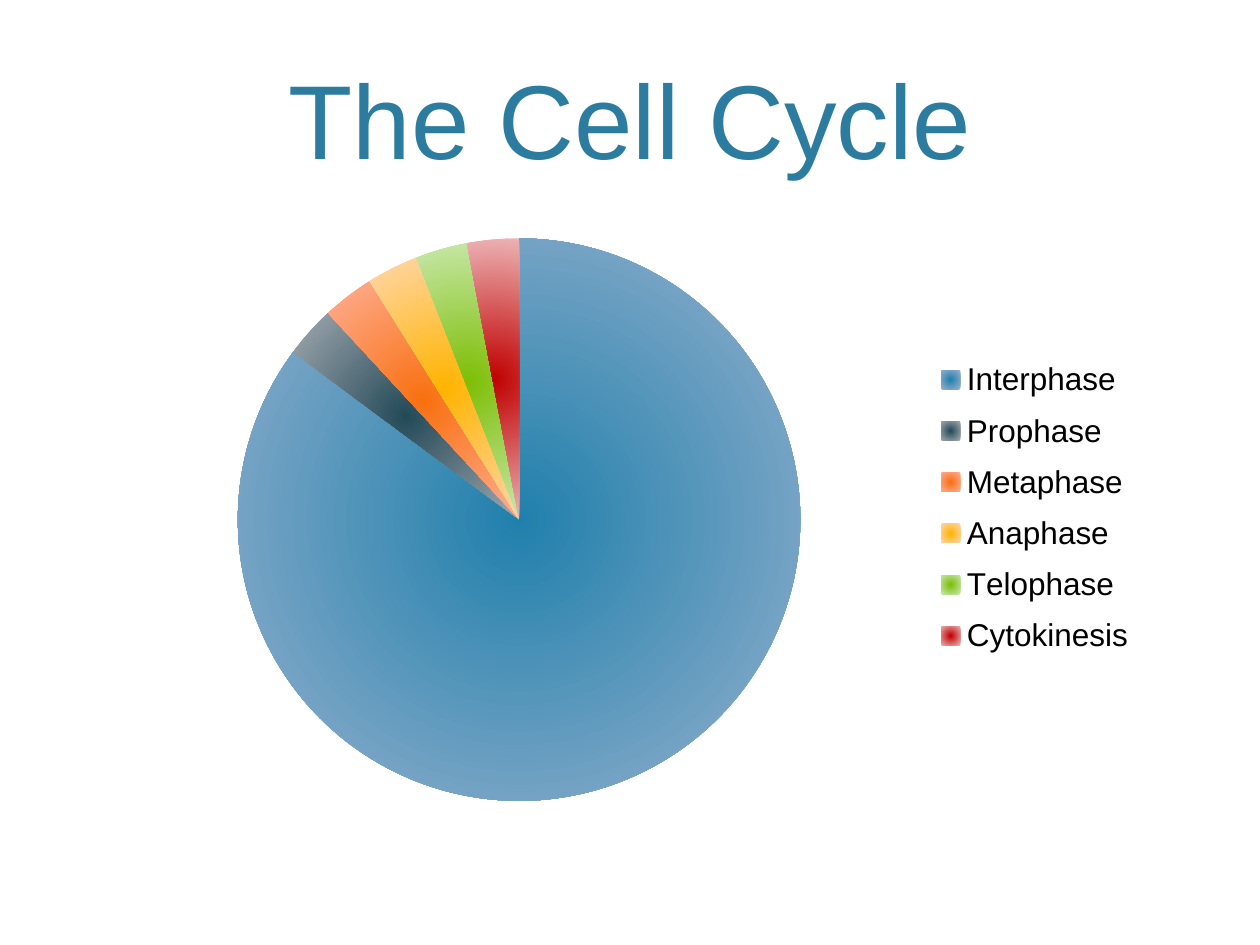
from lxml import etree
from pptx import Presentation
from pptx.chart.data import CategoryChartData
from pptx.dml.color import RGBColor
from pptx.enum.chart import XL_CHART_TYPE, XL_LEGEND_POSITION
from pptx.enum.text import MSO_ANCHOR, PP_ALIGN
from pptx.oxml import parse_xml
from pptx.oxml.ns import nsdecls, qn
from pptx.util import Inches, Pt

PIE = XL_CHART_TYPE.PIE
RIGHT = XL_LEGEND_POSITION.RIGHT
BOTTOM = MSO_ANCHOR.BOTTOM
CENTER = PP_ALIGN.CENTER

TITLE = "The Cell Cycle"
PHASES = [
    ("Interphase", 86, "2080AC", "98B1CE"),
    ("Prophase", 3, "244A58", "A2A9B0"),
    ("Metaphase", 3, "F87010", "FFAE94"),
    ("Anaphase", 3, "FFB400", "FFD7AC"),
    ("Telophase", 3, "7EBE06", "C8E8AC"),
    ("Cytokinesis", 3, "C00000", "ECB2B4"),
]
THEME = {
    "font": "Arial",
    "title": "2C7C9F",
    "text": "000000",
    "title_size": 60,
    "legend_size": 18,
}
LEFT, WIDTH = 0.6, 8.8
TITLE_BOX = (LEFT, 0.02, WIDTH, 1.46)
CHART_BOX = (LEFT, 1.75, WIDTH, 4.75)
PLOT = {"x": 0.14, "y": 0.03, "w": 0.52, "h": 0.94}
LEGEND = {"x": 0.77, "y": 0.21, "w": 0.19, "h": 0.54}


def style_font(font, size, color):
    font.name = THEME["font"]
    font.size = Pt(size)
    font.color.rgb = RGBColor.from_string(color)


def add_text(slide, text, *, box, size, color, align, anchor):
    s = slide.shapes.add_textbox(*map(Inches, box))
    tf = s.text_frame
    tf.word_wrap = True
    tf.vertical_anchor = anchor
    p = tf.paragraphs[0]
    p.alignment = align
    r = p.add_run()
    r.text = text
    style_font(r.font, size, color)


def fill_radial(point, colors):
    point.format.line.fill.background()
    fill = point.format.fill
    fill.gradient()
    for stop, color in zip(fill.gradient_stops, colors):
        stop.color.rgb = RGBColor.from_string(color)


def center_gradients(chart):
    for lin in list(chart._chartSpace.iter(qn("a:lin"))):
        path = parse_xml(
            f'<a:path {nsdecls("a")} path="circle">'
            '<a:fillToRect l="50000" t="50000" r="50000" b="50000"/></a:path>'
        )
        lin.getparent().replace(lin, path)


def place(chart, part, index, box, target=()):
    area = chart._chartSpace.find(".//" + qn(f"c:{part}"))
    for old in area.findall(qn("c:layout")):
        area.remove(old)
    layout = etree.Element(qn("c:layout"))
    manual = etree.SubElement(layout, qn("c:manualLayout"))
    modes = [("xMode", "edge"), ("yMode", "edge")]
    for tag, value in [*target, *modes, *box.items()]:
        etree.SubElement(manual, qn(f"c:{tag}")).set("val", str(value))
    area.insert(index, layout)


def add_pie(slide):
    names, values, *_ = zip(*PHASES)
    data = CategoryChartData()
    data.categories = names
    data.add_series("Series 1", values)
    chart = slide.shapes.add_chart(PIE, *map(Inches, CHART_BOX), data).chart
    chart.has_title = False
    style_font(chart.font, THEME["legend_size"], THEME["text"])
    chart.has_legend = True
    chart.legend.position = RIGHT
    chart.legend.include_in_layout = False
    plot = chart.plots[0]
    plot.vary_by_categories = True
    for i, (_, _, inner, outer) in enumerate(PHASES):
        fill_radial(plot.series[0].points[i], (inner, outer))
    center_gradients(chart)
    place(chart, "plotArea", 0, PLOT, [("layoutTarget", "inner")])
    place(chart, "legend", 1, LEGEND)


def main():
    prs = Presentation()
    prs.slide_width, prs.slide_height = Inches(10), Inches(7.5)
    slide = prs.slides.add_slide(prs.slide_layouts[6])
    add_text(slide, TITLE, box=TITLE_BOX, size=THEME["title_size"],
             color=THEME["title"], align=CENTER, anchor=BOTTOM)
    add_pie(slide)
    prs.save("out.pptx")


if __name__ == "__main__":
    main()
